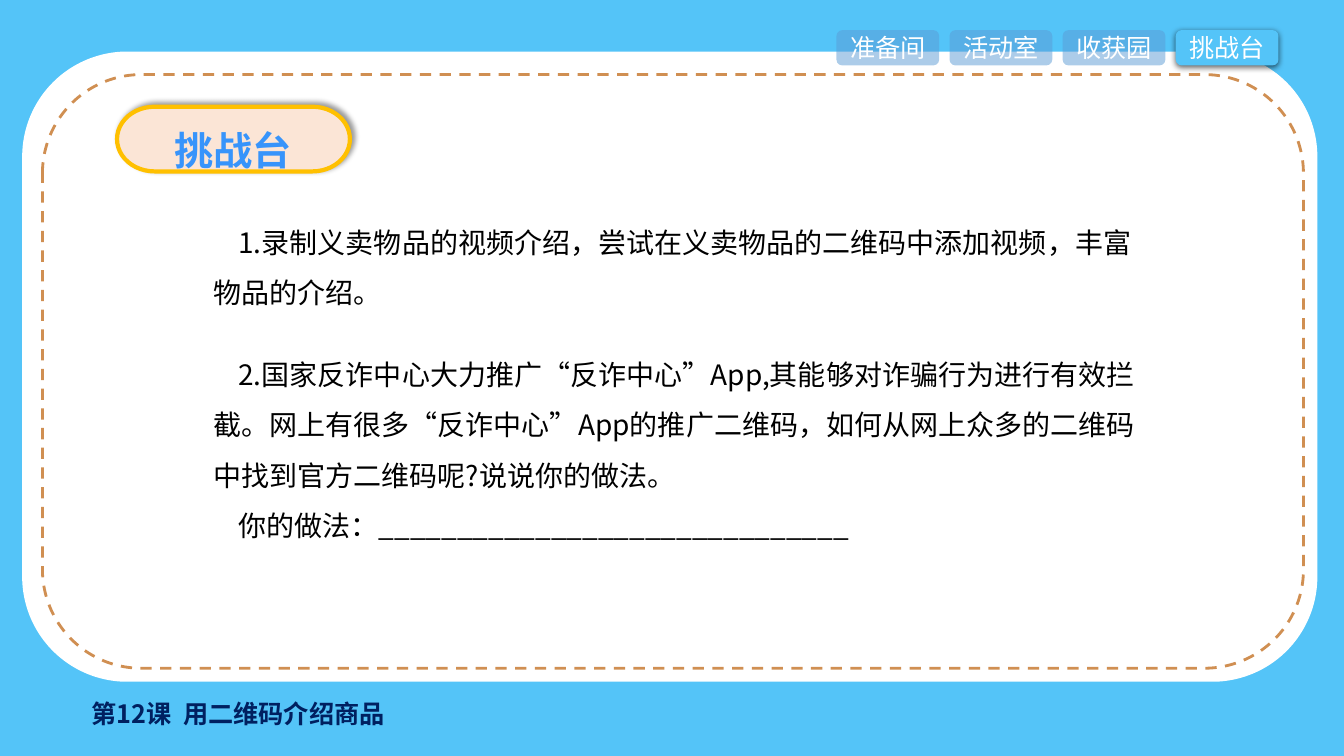
from lxml import etree
from pptx import Presentation
from pptx.dml.color import RGBColor
from pptx.enum.dml import MSO_LINE
from pptx.enum.shapes import MSO_SHAPE as SHAPE
from pptx.enum.text import MSO_ANCHOR as ANCHOR, MSO_AUTO_SIZE as AUTOSIZE, PP_ALIGN as ALIGN
from pptx.oxml import parse_xml
from pptx.oxml.ns import qn
from pptx.util import Cm, Pt

FONT = "Noto Sans CJK SC"
DRAWING_NS = 'xmlns:a="http://schemas.openxmlformats.org/drawingml/2006/main"'
SKY = RGBColor(0x54, 0xC4, 0xF8)
WHITE = RGBColor(0xFF, 0xFF, 0xFF)
BLACK = RGBColor(0, 0, 0)
STITCH = RGBColor(0xD0, 0x8F, 0x52)
NAVY = RGBColor(0x00, 0x20, 0x60)
PEACH = RGBColor(0xFB, 0xE5, 0xD6)
GOLD = RGBColor(0xFF, 0xC0, 0x00)
TITLE_BLUE = RGBColor(0x37, 0x94, 0xFB)
TAB_BLUE = RGBColor(0x5B, 0x9B, 0xD5)


def add_panel(preset, left, top, width, height, fill=None, shadow=None):
    """Add an unlined shape; shadow is (opacity %, blur pt, distance pt, degrees)."""
    panel = slide.shapes.add_shape(preset, Cm(left), Cm(top), Cm(width), Cm(height))
    panel.shadow.inherit = False
    panel.line.fill.background()
    if fill is None:
        panel.fill.background()
    else:
        panel.fill.solid()
        panel.fill.fore_color.rgb = fill
    if shadow:
        opacity, blur, distance, degrees = shadow
        effects = panel.element.spPr.find(qn("a:effectLst"))
        effects.append(parse_xml(
            f'<a:outerShdw {DRAWING_NS} blurRad="{Pt(blur)}" dist="{Pt(distance)}" '
            f'dir="{degrees * 60000}" algn="ctr" rotWithShape="0"><a:srgbClr val="000000">'
            f'<a:alpha val="{opacity * 1000}"/></a:srgbClr></a:outerShdw>'))
    return panel


def write(holder, text, size, color, bold=False, align=ALIGN.LEFT):
    """Fill a shape or text box with evenly styled text."""
    holder.text_frame.text = text
    for paragraph in holder.text_frame.paragraphs:
        paragraph.alignment = align
        for run in paragraph.runs:
            run.font.size = Pt(size)
            run.font.bold = bold
            run.font.name = FONT
            run.font.color.rgb = color
            east_asian = etree.SubElement(run.font._element, qn("a:ea"))
            east_asian.set("typeface", FONT)


prs = Presentation()
prs.slide_width, prs.slide_height = Cm(33.87), Cm(19.05)
slide = prs.slides.add_slide(prs.slide_layouts[6])
slide.background.fill.solid()
slide.background.fill.fore_color.rgb = SKY

# White card with a stitched border
add_panel(SHAPE.ROUNDED_RECTANGLE, 0.56, 1.3, 32.64, 15.88, WHITE)
stitching = add_panel(SHAPE.ROUNDED_RECTANGLE, 1.07, 1.88, 31.78, 14.96)
stitching.line.color.rgb = STITCH
stitching.line.width = Pt(2)
stitching.line.dash_style = MSO_LINE.DASH

# Lesson name in the footer
lesson = slide.shapes.add_textbox(Cm(2.06), Cm(17.48), Cm(9.02), Cm(1.02))
lesson.text_frame.word_wrap = True
lesson.text_frame.auto_size = AUTOSIZE.SHAPE_TO_FIT_TEXT
write(lesson, "第12课  用二维码介绍商品", 18, NAVY, bold=True)

# Section badge and its outlined title
badge = add_panel(SHAPE.FLOWCHART_TERMINATOR, 2.95, 2.69, 5.87, 1.63, PEACH, (40, 4, 3, 315))
badge.line.color.rgb = GOLD
badge.line.width = Pt(3)
section = slide.shapes.add_textbox(Cm(3.87), Cm(3.05), Cm(4), Cm(0.71))
section.text_frame.word_wrap = False
write(section, "挑战台", 28, TITLE_BLUE, bold=True, align=ALIGN.CENTER)
section_font = section.text_frame.paragraphs[0].runs[0].font
section_font._element.insert(0, parse_xml(
    f'<a:ln {DRAWING_NS} w="{Pt(1.4)}"><a:solidFill><a:srgbClr val="{WHITE}"/></a:solidFill></a:ln>'))

# Challenge tasks: top, height, text
tasks = [
    (5.13, 2.82, "1.录制义卖物品的视频介绍，尝试在义卖物品的二维码中添加视频，丰富物品的介绍。"),
    (8.46, 5.38, "2.国家反诈中心大力推广“反诈中心”App,其能够对诈骗行为进行有效拦截。"
                 "网上有很多“反诈中心”App的推广二维码，如何从网上众多的二维码中找到官方二维码呢?"
                 "说说你的做法。\n你的做法：______________________________"),
]
for top, height, text in tasks:
    task = slide.shapes.add_textbox(Cm(5.13), Cm(top), Cm(23.92), Cm(height))
    task.text_frame.word_wrap = True
    task.text_frame.auto_size = AUTOSIZE.SHAPE_TO_FIT_TEXT
    write(task, text, 20, BLACK)
    for paragraph in task.text_frame.paragraphs:
        paragraph.line_spacing = 1.5
        paragraph._p.get_or_add_pPr().set("indent", str(Cm(0.63)))

# Navigation tabs, the current section raised
current = "挑战台"
for index, label in enumerate(["准备间", "活动室", "收获园", current]):
    is_current = label == current
    tab = add_panel(SHAPE.ROUNDED_RECTANGLE, 21.08 + 2.85 * index, 0.76, 2.59, 0.89,
                    SKY if is_current else TAB_BLUE,
                    (63, 4.5, 1.5, 90) if is_current else None)
    if not is_current:
        tab_color = tab.element.spPr.find(qn("a:solidFill"))[0]
        etree.SubElement(tab_color, qn("a:alpha")).set("val", "50000")
    tab.text_frame.vertical_anchor = ANCHOR.MIDDLE
    write(tab, label, 18, WHITE, align=ALIGN.CENTER)

prs.save("out.pptx")
